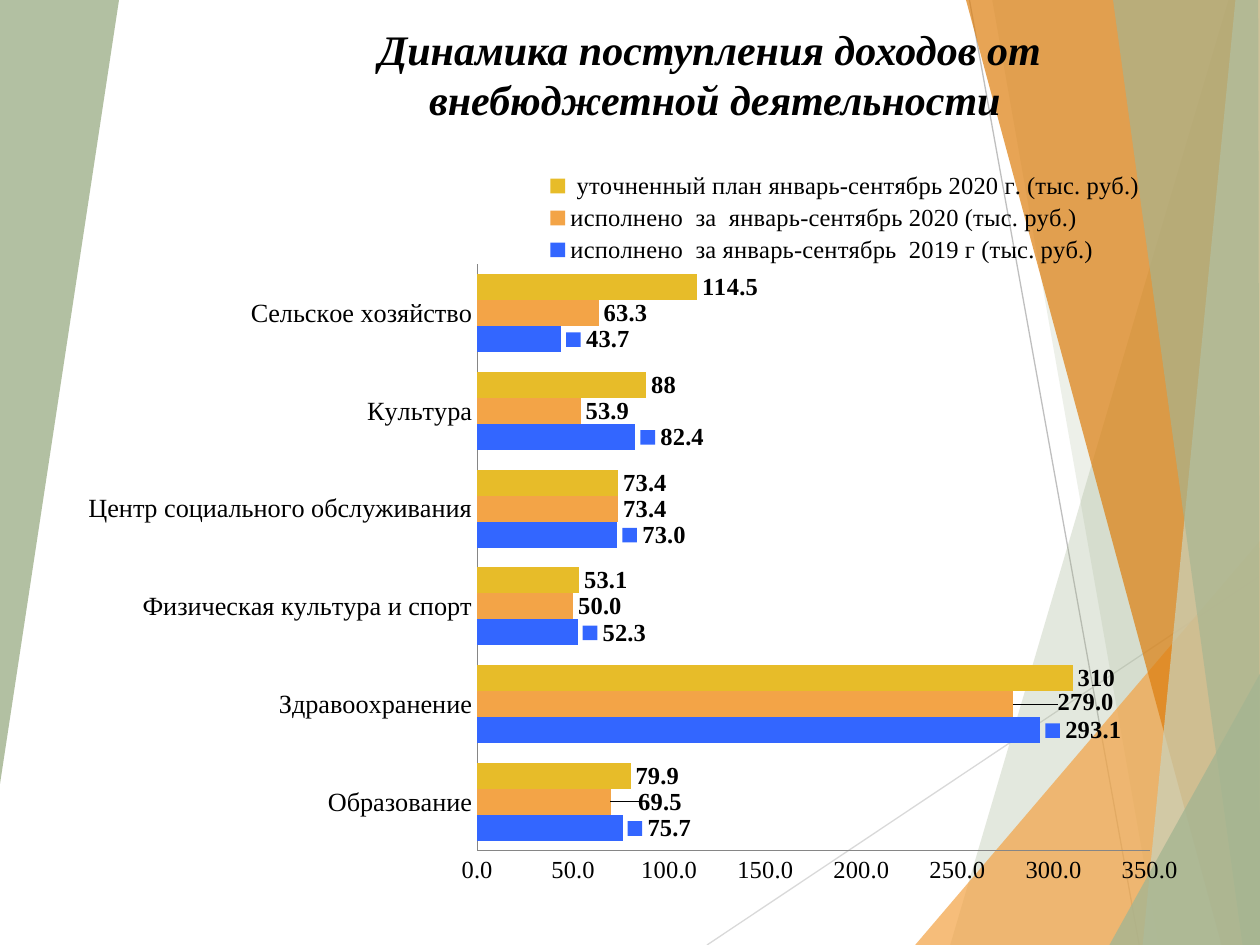
from lxml.etree import SubElement
from pptx import Presentation
from pptx.chart.data import CategoryChartData
from pptx.dml.color import RGBColor
from pptx.enum.chart import XL_CHART_TYPE as ChartType, XL_LABEL_POSITION as LabelPosition
from pptx.enum.chart import XL_LEGEND_POSITION as LegendPosition, XL_TICK_MARK as TickMark
from pptx.enum.shapes import MSO_CONNECTOR as Connector
from pptx.enum.text import MSO_ANCHOR as Anchor, PP_ALIGN as Align
from pptx.oxml import parse_xml
from pptx.oxml.ns import nsdecls, qn
from pptx.util import Pt

RAYS = [((404, 540), (720, 329), "D9D9D9"), ((554, 0), (651, 540), "BFBFBF")]
FACETS = [
    ([(702, 0), (543, 540), (720, 540), (720, 0)], "A5B592", 30),
    ([(567, 0), (662, 540), (720, 540), (720, 0)], "A5B592", 20),
    ([(523, 540), (720, 309), (720, 540)], "F3A447", 72),
    ([(552, 0), (698, 540), (720, 540), (720, 0)], "DD7E0E", 70),
    ([(706, 0), (653, 540), (720, 540), (720, 0)], "C9D3BE", 70),
    ([(636, 0), (710, 540), (720, 540), (719, 0)], "A5B592", 65),
    ([(634, 540), (720, 385), (720, 540)], "A5B592", 80),
    ([(0, 0), (68, 0), (0, 448)], "A5B592", 85),
]
TITLE = ["Динамика поступления доходов от", " внебюджетной деятельности"]
SECTORS = ["Образование", "Здравоохранение", "Физическая культура и спорт",
           "Центр социального обслуживания", "Культура", "Сельское хозяйство"]
INCOME = [
    ("исполнено  за январь-сентябрь  2019 г (тыс. руб.)", "3366FF", "#,##0.0",
     [75.7, 293.1, 52.3, 73, 82.4, 43.7]),
    ("исполнено  за  январь-сентябрь 2020 (тыс. руб.)", "F3A447", "#,##0.0",
     [69.5, 279, 50, 73.4, 53.9, 63.3]),
    (" уточненный план январь-сентябрь 2020 г. (тыс. руб.)", "E7BC29", "General",
     [79.9, 310, 53.1, 73.4, 88, 114.5]),
]
LABEL_SHIFTS = {0: (0.02, 0), 1: (0.035, -0.003)}


def color(value):
    return RGBColor.from_string(value)


def layout(target=None, **numbers):
    """Return a manual chart layout element."""
    inner = f'<c:layoutTarget val="{target}"/>' if target else ""
    if "w" in numbers:
        inner += '<c:xMode val="edge"/><c:yMode val="edge"/>'
    inner += "".join(f'<c:{key} val="{value}"/>' for key, value in numbers.items())
    return parse_xml(f'<c:layout {nsdecls("c")}><c:manualLayout>{inner}</c:manualLayout></c:layout>')


def set_layout(element, new, index):
    for old in element.findall(qn("c:layout")):
        element.remove(old)
    element.insert(index, new)


class Deck:
    """Holds the text style and the current slide, and draws each kind of element."""

    font_name = "Times New Roman"
    text_color = "000000"
    axis_color = "868686"

    def __init__(self, slide):
        self.slide = slide
        self.shapes = slide.shapes

    def style(self, font, size, bold=False, italic=False):
        font.name, font.size, font.bold, font.italic = self.font_name, Pt(size), bold, italic
        font.color.rgb = color(self.text_color)

    def ray(self, start, end, line_color):
        ray = self.shapes.add_connector(Connector.STRAIGHT, *map(Pt, start + end))
        ray.line.color.rgb = color(line_color)
        ray.line.width = Pt(0.75)
        SubElement(ray._element.spPr, qn("a:effectLst"))

    def facet(self, points, fill, opacity):
        builder = self.shapes.build_freeform(*points[0], scale=Pt(1))
        builder.add_line_segments(points[1:], close=True)
        shape = builder.convert_to_shape()
        shape.shadow.inherit = False
        shape.fill.solid()
        shape.fill.fore_color.rgb = color(fill)
        shape.line.fill.background()
        fill_color = shape._element.spPr.find(qn("a:solidFill"))[0]
        SubElement(fill_color, qn("a:alpha"), val=str(opacity * 1000))

    def title(self, lines, left, top, width, height):
        frame = self.shapes.add_textbox(*map(Pt, (left, top, width, height))).text_frame
        frame.word_wrap = True
        frame.vertical_anchor = Anchor.BOTTOM
        frame.text = "\n".join(lines)
        for paragraph in frame.paragraphs:
            paragraph.alignment = Align.CENTER
            self.style(paragraph.font, 24, bold=True, italic=True)

    def axis(self, axis, size):
        axis.has_major_gridlines = False
        axis.major_tick_mark = axis.minor_tick_mark = TickMark.NONE
        axis.format.line.color.rgb = color(self.axis_color)
        axis.format.line.width = Pt(0.75)
        self.style(axis.tick_labels.font, size)

    def labels(self, series, number_format):
        labels = series.data_labels
        labels.show_value = True
        labels.position = LabelPosition.OUTSIDE_END
        labels.number_format = number_format
        labels.number_format_is_linked = False
        self.style(labels.font, 14, bold=True)
        return labels

    def shift_label(self, series, index, x, y, number_format):
        label = series.points[index].data_label
        self.style(label.font, 14, bold=True)
        label.position = LabelPosition.OUTSIDE_END
        element = series.data_labels._element.findall(qn("c:dLbl"))[index]
        set_layout(element, layout(x=x, y=y), 1)
        element.insert(2, parse_xml(
            f'<c:numFmt {nsdecls("c")} formatCode="{number_format}" sourceLinked="0"/>'))

    def bar_chart(self, categories, rows, left, top, width, height):
        data = CategoryChartData()
        data.categories = categories
        for name, _, _, values in rows:
            data.add_series(name, values)
        frame = self.shapes.add_chart(
            ChartType.BAR_CLUSTERED, *map(Pt, (left, top, width, height)), data)
        chart = frame.chart
        chart.has_title = False
        chart.font.name, chart.font.size = "Roboto", Pt(18)
        chart.font.color.rgb = color(self.text_color)
        plot = chart.plots[0]
        plot.gap_width, plot.vary_by_categories = 75, False
        for series, (_, fill, number_format, _) in zip(plot.series, rows):
            series.format.fill.solid()
            series.format.fill.fore_color.rgb = color(fill)
            self.labels(series, number_format)
        self.axis(chart.category_axis, 15)
        self.axis(chart.value_axis, 14)
        value_axis = chart.value_axis
        value_axis.minimum_scale, value_axis.maximum_scale, value_axis.major_unit = 0, 350, 50
        value_axis.tick_labels.number_format = "#,##0.0"
        value_axis.tick_labels.number_format_is_linked = False
        chart.has_legend = True
        chart.legend.position = LegendPosition.TOP
        chart.legend.include_in_layout = False
        self.style(chart.legend.font, 14)
        set_layout(chart.legend._element, layout(x=0.42, y=0.05, w=0.54, h=0.13), 1)
        plot_area = chart._chartSpace.chart.plotArea
        set_layout(plot_area, layout("inner", x=0.365, y=0.175, w=0.594, h=0.762), 0)
        return plot


def main():
    presentation = Presentation()
    presentation.slide_width, presentation.slide_height = Pt(720), Pt(540)
    deck = Deck(presentation.slides.add_slide(presentation.slide_layouts[6]))
    for ray in RAYS:
        deck.ray(*ray)
    for facet in FACETS:
        deck.facet(*facet)
    deck.title(TITLE, 65.5, 32.5, 680, 42)
    plot = deck.bar_chart(SECTORS, INCOME, 36.5, 74, 647, 440)
    previous, current, _ = plot.series
    previous.data_labels.show_legend_key = True
    for index, (x, y) in LABEL_SHIFTS.items():
        deck.shift_label(current, index, x, y, "#,##0.0")
    presentation.save("out.pptx")


if __name__ == "__main__":
    main()
